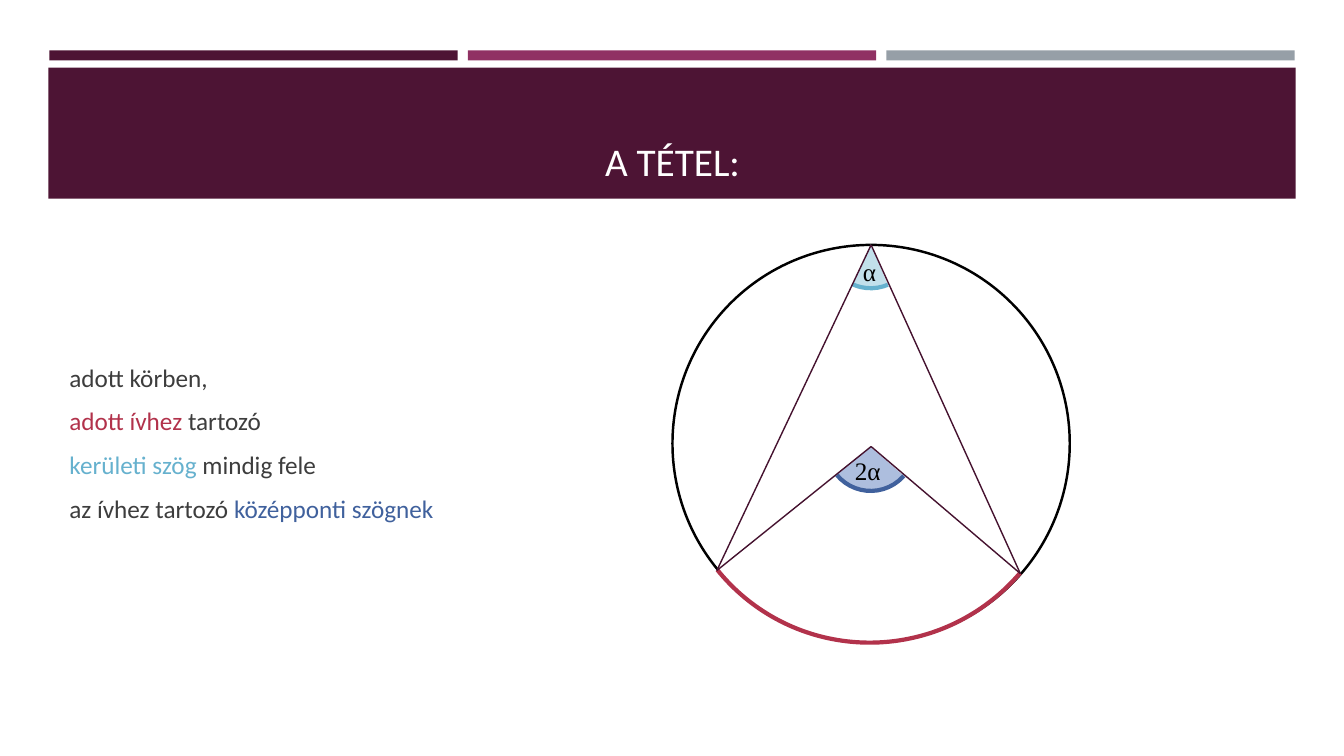
import pptx
import pptx.util
import pptx.dml.color
import pptx.enum.shapes
import pptx.enum.text
import pptx.oxml

Inches, Pt = pptx.util.Inches, pptx.util.Pt
SHAPE = pptx.enum.shapes.MSO_SHAPE
ANCHOR = pptx.enum.text.MSO_ANCHOR
ALIGN = pptx.enum.text.PP_ALIGN

# Content
TITLE = "A TÉTEL:"
DARK, GREY, RED, CYAN, BLUE = "4D1434", "3D3D3D", "B2324B", "66B1CE", "40619D"
THEOREM = [
    [("adott körben,", GREY)],
    [("adott ívhez", RED), (" tartozó", GREY)],
    [("kerületi szög", CYAN), (" mindig fele", GREY)],
    [("az ívhez tartozó ", GREY), ("középponti szögnek", BLUE)],
]
BARS = [DARK, "903163", "969FA7"]

# Points of the figure, in inches
CENTRE, APEX = (8.64, 4.43), (8.64, 2.43)
ARC_ENDS = [(7.11, 5.66), (10.12, 5.69)]
# Box, rotation, start and end angle (degrees), fill, line
INTERCEPTED = ((6.68, 2.48, 3.91, 3.89), 130.4, 270, 10.69, "FFFFFF", RED)
# Vertex, arc
ANGLES = [
    (CENTRE, ((8.2, 4, 0.87, 0.87), 133.2, 267.83, 7.32, "ADBEDE", BLUE)),
    (APEX, ((8.2, 1.99, 0.87, 0.87), 133.2, 293.69, 341.37, "C2E0EB", CYAN)),
]
LABELS = [("α", (8.46, 2.49, 0.34, 0.4)), ("2α", (8.38, 4.47, 0.46, 0.4))]


def rgb(value):
    return pptx.dml.color.RGBColor.from_string(value)


def add_shape(kind, box, fill, line=None, width=1):
    sp = slide.shapes.add_shape(kind, *map(Inches, box))
    sp.shadow.inherit = False
    sp.fill.solid()
    sp.fill.fore_color.rgb = rgb(fill)
    if line:
        sp.line.color.rgb = rgb(line)
        sp.line.width = Pt(width)
    else:
        sp.line.fill.background()
    return sp


def add_arc(box, rotation, start, end, fill, line):
    sp = add_shape(SHAPE.ARC, box, fill, line, 3)
    sp.rotation = rotation
    # One degree is 60000 units and an adjustment of 1 is 100000
    sp.adjustments[0], sp.adjustments[1] = start * 0.6, end * 0.6


def add_line(start, end):
    line = slide.shapes.add_connector(
        pptx.enum.shapes.MSO_CONNECTOR.STRAIGHT, *map(Inches, start + end))
    line.line.color.rgb = rgb("45122F")
    line.line.width = Pt(1)
    line._element.spPr.append(pptx.oxml.parse_xml(
        '<a:effectLst xmlns:a="http://schemas.openxmlformats.org/drawingml/2006/main"/>'))


def set_font(p, name, size, color=None):
    p.font.name, p.font.size = name, Pt(size)
    if color:
        p.font.color.rgb = rgb(color)


prs = pptx.Presentation()
prs.slide_width, prs.slide_height = Inches(13.33), Inches(7.5)
slide = prs.slides.add_slide(prs.slide_layouts[5])

# Header bars and title band
for i, color in enumerate(BARS):
    add_shape(SHAPE.RECTANGLE, (0.49 + i * 4.15, 0.5, 4.05, 0.1), color)
band = add_shape(SHAPE.RECTANGLE, (0.48, 0.67, 12.37, 1.3), DARK)

# Title, moved in front of the band
title = slide.shapes.title
title.left, title.top, title.width, title.height = map(
    Inches, (0.64, 0.77, 12.06, 1.11))
band._element.addnext(title._element)
tf = title.text_frame
tf.text = TITLE
tf.auto_size = pptx.enum.text.MSO_AUTO_SIZE.NONE
tf.vertical_anchor = ANCHOR.BOTTOM
tf.paragraphs[0].alignment = ALIGN.CENTER
set_font(tf.paragraphs[0], "Calibri", 28, "FFFFFF")

# Theorem text
tf = slide.shapes.add_textbox(*map(Inches, (0.59, 2.38, 4.5, 4.02))).text_frame
tf.word_wrap = True
tf.vertical_anchor = ANCHOR.MIDDLE
for i, runs in enumerate(THEOREM):
    p = tf.add_paragraph() if i else tf.paragraphs[0]
    p.space_before, p.space_after = Pt(3.6), Pt(6)
    set_font(p, "Calibri", 18)
    for text, color in runs:
        r = p.add_run()
        r.text = text
        r.font.color.rgb = rgb(color)

# Circle, intercepted arc and the two angles
add_shape(SHAPE.OVAL, (6.67, 2.43, 3.94, 3.94), "FFFFFF", "000000", 1.75)
add_arc(*INTERCEPTED)
for vertex, arc in ANGLES:
    add_arc(*arc)
    for end in ARC_ENDS:
        add_line(vertex, end)

# Angle labels
for text, box in LABELS:
    tf = slide.shapes.add_textbox(*map(Inches, box)).text_frame
    tf.text = text
    tf.word_wrap = False
    tf.auto_size = pptx.enum.text.MSO_AUTO_SIZE.SHAPE_TO_FIT_TEXT
    set_font(tf.paragraphs[0], "Times New Roman", 18, "000000")

prs.save("out.pptx")
